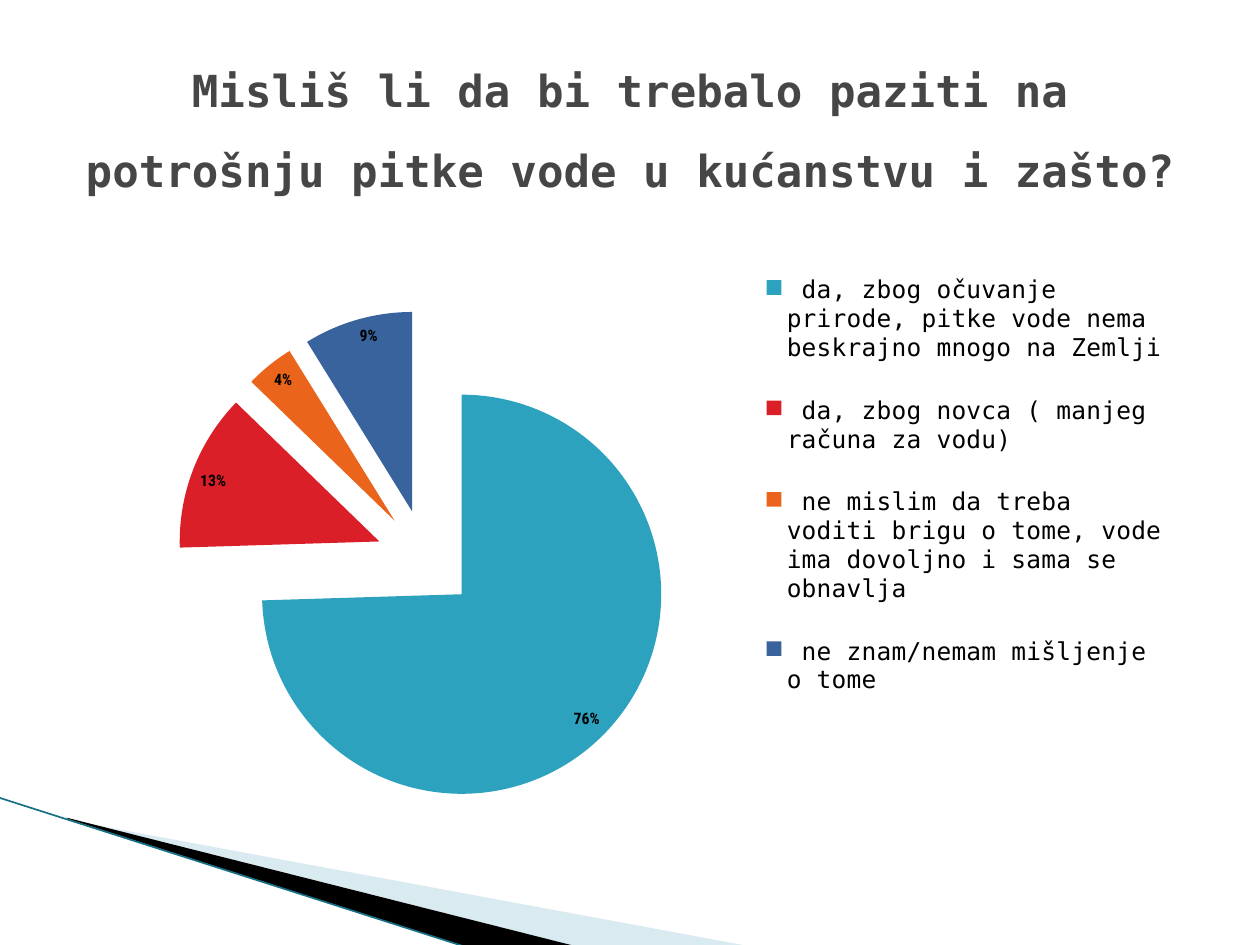
from typing import NamedTuple

from lxml.etree import SubElement
from pptx import Presentation
from pptx.chart.data import CategoryChartData
from pptx.dml.color import RGBColor
from pptx.enum.chart import XL_CHART_TYPE as ChartType
from pptx.enum.chart import XL_LABEL_POSITION as LabelPosition
from pptx.enum.chart import XL_LEGEND_POSITION as LegendPosition
from pptx.enum.shapes import MSO_CONNECTOR as Connector
from pptx.enum.text import MSO_ANCHOR as Anchor
from pptx.enum.text import MSO_AUTO_SIZE as AutoSize
from pptx.enum.text import PP_ALIGN as Align
from pptx.oxml import parse_xml
from pptx.oxml.ns import nsdecls, qn
from pptx.util import Inches, Pt

TEXT_FONT = "DejaVu Sans Mono"
LABEL_FONT = "Roboto Condensed"
BLACK = RGBColor(0x00, 0x00, 0x00)
TITLE_GREY = RGBColor(0x46, 0x46, 0x46)
PALE_BLUE = RGBColor(0xA0, 0xCB, 0xDC)
DARK_TEAL = RGBColor(0x16, 0x70, 0x84)
TEAL = RGBColor(0x2D, 0xA2, 0xBF)
RED = RGBColor(0xDA, 0x1F, 0x28)
ORANGE = RGBColor(0xEB, 0x64, 0x1B)
BLUE = RGBColor(0x39, 0x63, 0x9D)


class Answer(NamedTuple):
    text: str
    percent: int
    color: RGBColor


class Wedge(NamedTuple):
    points: list[tuple[float, float]]
    color: RGBColor
    opacity: int


ANSWERS = [
    Answer(" da, zbog očuvanje prirode, pitke vode nema beskrajno mnogo na Zemlji", 76, TEAL),
    Answer(" da, zbog novca ( manjeg računa za vodu)", 13, RED),
    Answer(" ne mislim da treba voditi brigu o tome, vode ima dovoljno i sama se obnavlja  ", 4, ORANGE),
    Answer(" ne znam/nemam mišljenje o tome  ", 9, BLUE),
]
WEDGES = [
    Wedge([(0.55, 6.51), (5.95, 7.51), (4.56, 7.51), (0.55, 6.5)], PALE_BLUE, 40),
    Wedge([(0.53, 6.49), (4.57, 7.51), (3.72, 7.52), (0.54, 6.5)], BLACK, 100),
]


def add_wedge(page, wedge: Wedge) -> None:
    start, *rest = [(Inches(x), Inches(y)) for x, y in wedge.points]
    builder = page.shapes.build_freeform(*start)
    builder.add_line_segments(rest)
    shape = builder.convert_to_shape()
    shape.shadow.inherit = False
    shape.fill.solid()
    shape.fill.fore_color.rgb = wedge.color
    shape.line.fill.background()
    if wedge.opacity < 100:
        color = shape.fill._xPr.find(qn("a:solidFill"))[0]
        SubElement(color, qn("a:alpha"), val=str(wedge.opacity * 1000))


def add_edge_line(page) -> None:
    line = page.shapes.add_connector(
        Connector.STRAIGHT, Inches(-0.01), Inches(6.33), Inches(3.71), Inches(7.52))
    line.line.color.rgb = DARK_TEAL
    line.line.width = Pt(0.95)
    SubElement(line._element.spPr, qn("a:effectLst"))


def set_layout(parent, index: int, **fractions: float) -> None:
    """Place a chart part by fractions of the chart's size."""
    for old in parent.findall(qn("c:layout")):
        parent.remove(old)
    modes = '<c:xMode val="edge"/><c:yMode val="edge"/>'
    sizes = "".join(f'<c:{name} val="{value}"/>' for name, value in fractions.items())
    parent.insert(index, parse_xml(
        f'<c:layout {nsdecls("c")}><c:manualLayout>{modes}{sizes}</c:manualLayout></c:layout>'))


def add_answer_chart(page) -> None:
    data = CategoryChartData()
    data.categories = [answer.text for answer in ANSWERS]
    data.add_series("Series 1", [answer.percent for answer in ANSWERS])
    chart = page.shapes.add_chart(
        ChartType.PIE, Inches(0.5), Inches(1.62), Inches(9), Inches(4.95), data).chart
    chart.has_title = False
    chart.font.name = TEXT_FONT
    chart.font.size = Pt(18)
    chart.font.color.rgb = BLACK

    chart.has_legend = True
    legend = chart.legend
    legend.position = LegendPosition.RIGHT
    legend.include_in_layout = False
    legend.font.name = TEXT_FONT
    legend.font.size = Pt(14)
    legend.font.color.rgb = BLACK
    set_layout(legend._element, 1, x=0.62, y=0.06, w=0.35, h=0.78)
    set_layout(chart._chartSpace.chart.plotArea, 0, x=0.1, y=0.17, w=0.44, h=0.8)

    plot = chart.plots[0]
    plot.vary_by_categories = True
    series = plot.series[0]
    for index, answer in enumerate(ANSWERS):
        fill = series.points[index].format.fill
        fill.solid()
        fill.fore_color.rgb = answer.color
    first_point = series._element.find(qn("c:dPt"))
    first_point.addprevious(parse_xml(f'<c:explosion {nsdecls("c")} val="25"/>'))

    # The rounded percentages add up to 102, so they are shown as values.
    labels = series.data_labels
    labels.show_percentage = False
    labels.show_value = True
    labels.number_format = '0"%"'
    labels.number_format_is_linked = False
    labels.position = LabelPosition.INSIDE_END
    labels.font.name = LABEL_FONT
    labels.font.size = Pt(9)
    labels.font.bold = True
    labels.font.color.rgb = BLACK


def fill_title(title) -> None:
    title.left, title.top = Inches(0.5), Inches(0.3)
    title.width, title.height = Inches(9), Inches(1.25)
    frame = title.text_frame
    frame.text = "Misliš li da bi trebalo paziti na potrošnju pitke vode u kućanstvu i zašto?"
    frame.word_wrap = True
    frame.auto_size = AutoSize.NONE
    frame.vertical_anchor = Anchor.MIDDLE
    paragraph = frame.paragraphs[0]
    paragraph.alignment = Align.CENTER
    paragraph.line_spacing = 1.5
    font = paragraph.runs[0].font
    font.name = TEXT_FONT
    font.size = Pt(25.2)
    font.bold = True
    font.color.rgb = TITLE_GREY


def main() -> None:
    deck = Presentation()
    deck.slide_width, deck.slide_height = Inches(10), Inches(7.5)
    page = deck.slides.add_slide(deck.slide_layouts[5])
    for wedge in WEDGES:
        add_wedge(page, wedge)
    add_edge_line(page)
    add_answer_chart(page)
    fill_title(page.shapes.title)
    deck.save("out.pptx")


if __name__ == "__main__":
    main()
